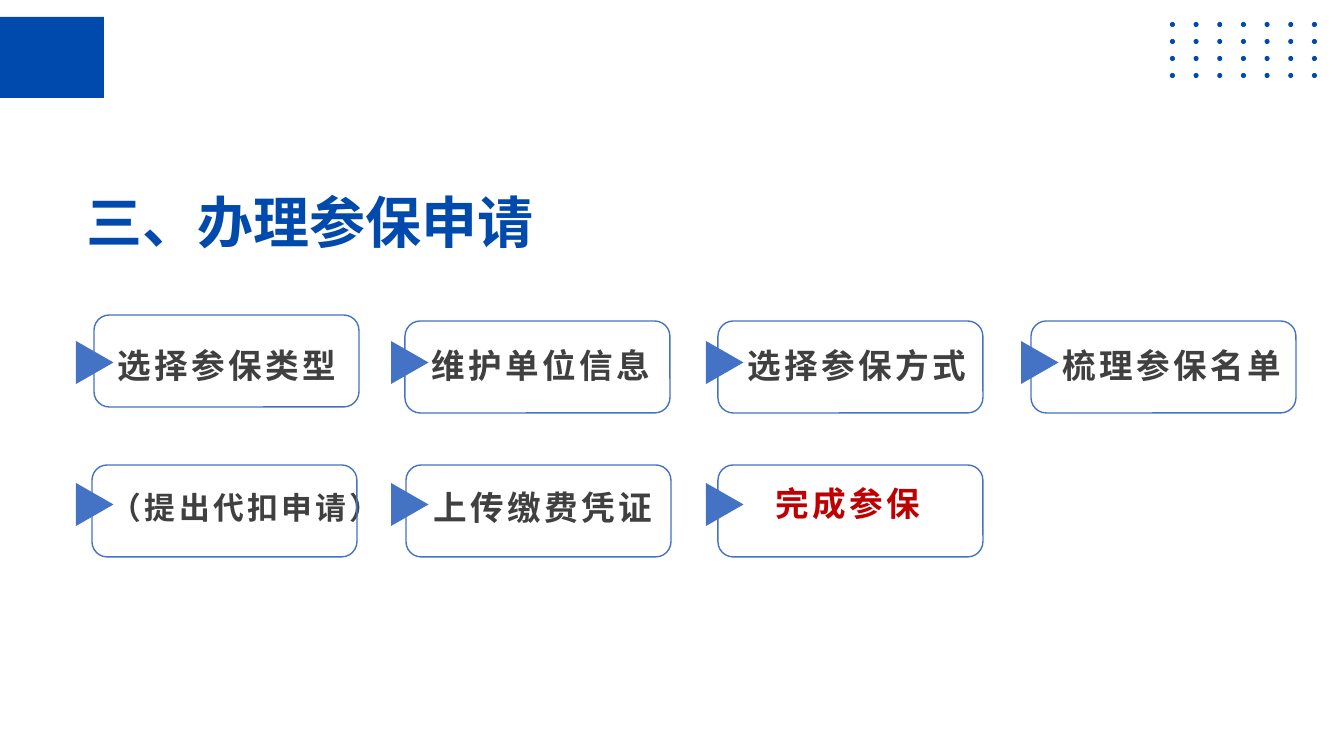
import math

from pptx import Presentation
from pptx.dml.color import RGBColor
from pptx.enum import shapes, text
from pptx.oxml.ns import qn
from pptx.util import Pt

PX = 12192000 / 1344
BLUE, STEP_BLUE, GREY, RED = "004AAD", "4472C4", "404040", "C00000"
CJK = "Noto Sans CJK SC"

# label, size, colour, frame offset (x, y), label offset x, label width
STEPS = [
    [("选择参保类型", 24, GREY, 18, 26, 32, 258),
     ("维护单位信息", 24, GREY, 14, 32, 31, 257),
     ("选择参保方式", 24, GREY, 12, 32, 32, 254),
     ("梳理参保名单", 24, GREY, 10, 32, 32, 246)],
    [("（提出代扣申请）", 22, GREY, 16, 34, 25, 290),
     ("上传缴费凭证", 24, GREY, 15, 34, 33, 248),
     ("完成参保", 24, RED, 12, 34, 32, 220)],
]


def px(*lengths):
    return [round(n * PX) for n in lengths]


def rgb(value):
    return RGBColor.from_string(value)


def fill(sp, color):
    sp.shadow.inherit = False
    sp.fill.solid()
    sp.fill.fore_color.rgb = rgb(color)
    sp.line.fill.background()


def write(tf, words, size, color, latin, spacing=0):
    """Put one bold line in the frame, with letter spacing in points."""
    tf.word_wrap = True
    tf.vertical_anchor = text.MSO_ANCHOR.MIDDLE
    p = tf.paragraphs[0]
    p.text = words
    font = p.font
    font.size, font.bold, font.name = Pt(size), True, latin
    font.color.rgb = rgb(color)
    props = p._p.pPr.find(qn("a:defRPr"))
    props.set("spc", str(round(spacing * 100)))
    east_asian = props.makeelement(qn("a:ea"), {"typeface": CJK})
    props.find(qn("a:latin")).addnext(east_asian)
    return p


def outline(s, contours, color):
    """Draw closed contours, given as px points, as one filled shape."""
    builder = s.shapes.build_freeform(*px(*contours[0][0]))
    for i, points in enumerate(contours):
        if i:
            builder.move_to(*px(*points[0]))
        builder.add_line_segments([px(*pt) for pt in points[1:]], close=True)
    fill(builder.convert_to_shape(), color)


def add_corner_block(s, x, y, w, h):
    fill(s.shapes.add_shape(shapes.MSO_SHAPE.RECTANGLE, *px(x, y, w, h)), BLUE)


def add_dot_grid(s, x, y, w, h, cols=7, rows=4, radius=2.5, sides=16):
    dx = (w - 2 * radius) / (cols - 1)
    dy = (h - 2 * radius) / (rows - 1)
    angles = [2 * math.pi * k / sides for k in range(sides)]
    dots = [[(x + radius + c * dx + radius * math.cos(a),
              y + radius + r * dy + radius * math.sin(a)) for a in angles]
            for r in range(rows) for c in range(cols)]
    outline(s, dots, BLUE)


def add_title(s, x, y, w, h):
    sp = s.shapes.title
    sp.left, sp.top, sp.width, sp.height = px(x, y, w, h)
    p = write(sp.text_frame, "三、办理参保申请", 40, BLUE, CJK)
    p.alignment = text.PP_ALIGN.LEFT


def add_step(s, x, y, step):
    label, size, color, frame_x, frame_y, label_x, label_w = step
    top = y + 52
    outline(s, [[(x, top), (x + 37.5, top + 21.5), (x, top + 43)]], STEP_BLUE)

    box = s.shapes.add_textbox(*px(x + label_x, y, label_w, 144))
    p = write(box.text_frame, label, size, color, "Arial", 2.4)
    p.space_after = Pt(8)
    if color == RED:
        p.alignment = text.PP_ALIGN.CENTER
    else:
        p.line_spacing = 1.2

    frame = s.shapes.add_shape(shapes.MSO_SHAPE.ROUNDED_RECTANGLE,
                               *px(x + frame_x, y + frame_y, 265, 92))
    frame.shadow.inherit = False
    frame.fill.background()
    frame.line.color.rgb = rgb(STEP_BLUE)
    frame.line.width = Pt(1)


def add_steps(s, x, y, col_pitch=315, row_pitch=142):
    for r, row in enumerate(STEPS):
        for c, step in enumerate(row):
            add_step(s, x + c * col_pitch, y + r * row_pitch, step)


def main():
    prs = Presentation()
    prs.slide_width, prs.slide_height = px(1344, 756)
    s = prs.slides.add_slide(prs.slide_layouts[5])
    add_corner_block(s, 0, 17, 104, 81)
    add_dot_grid(s, 1170, 22, 147, 56)
    add_title(s, 76, 182, 967, 78)
    add_steps(s, 76, 289)
    prs.save("out.pptx")


if __name__ == "__main__":
    main()
